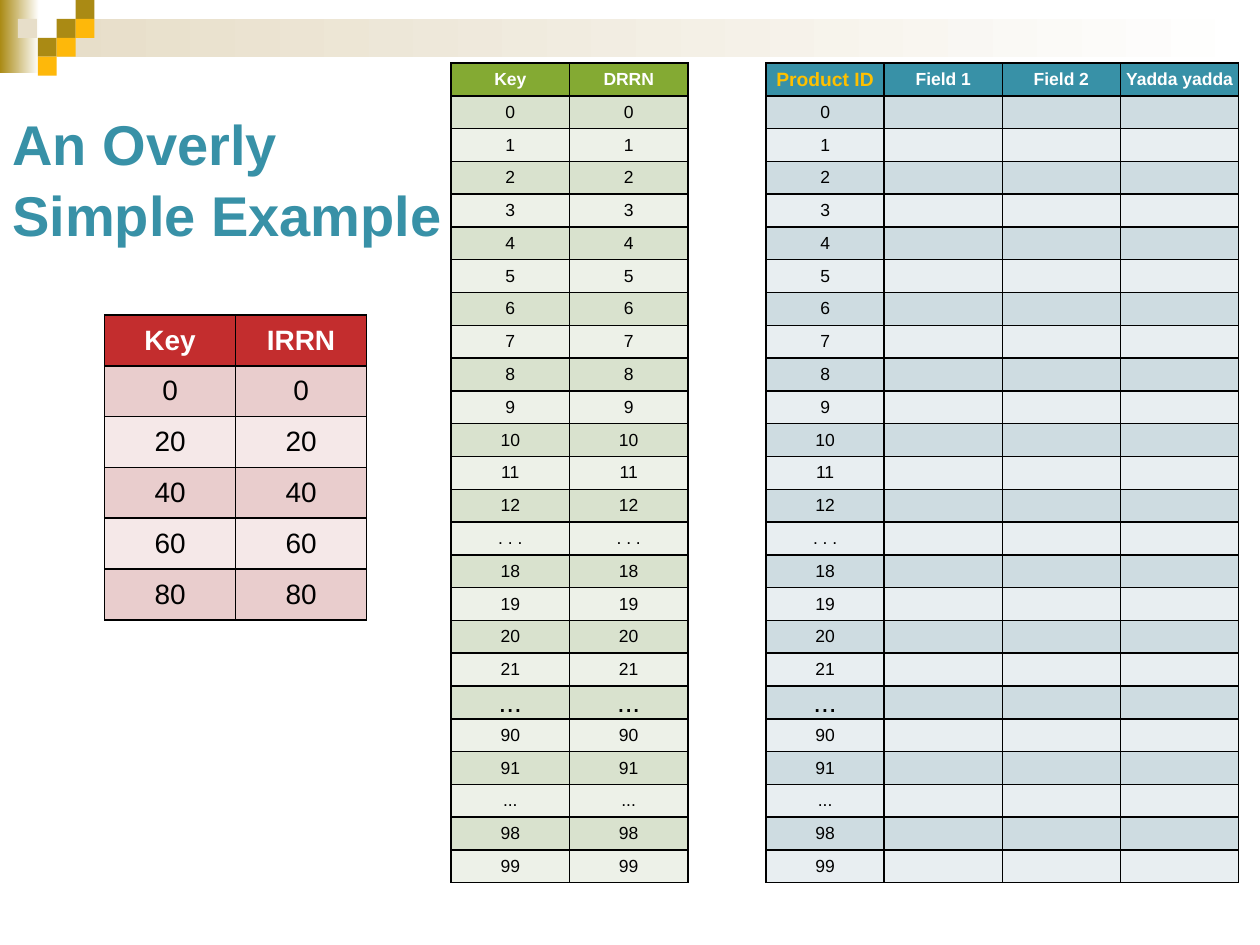
import pptx
import pptx.util
import pptx.dml.color
import pptx.enum.shapes
import pptx.enum.text
import pptx.oxml.ns
from lxml import etree

Inches = pptx.util.Inches
RGBColor = pptx.dml.color.RGBColor

BLACK = RGBColor(0x00, 0x00, 0x00)
WHITE = RGBColor(0xFF, 0xFF, 0xFF)
TEAL = RGBColor(0x38, 0x91, 0xA7)
GOLD = RGBColor(0xFF, 0xC0, 0x00)
OCHRE = RGBColor(0xAA, 0x8A, 0x14)
AMBER = RGBColor(0xFE, 0xB8, 0x0A)
SAND = RGBColor(0xE7, 0xDE, 0xC9)

# Header, odd row and even row fills of each table
TEAL_BANDS = (TEAL, RGBColor(0xCE, 0xDC, 0xE1), RGBColor(0xE8, 0xEE, 0xF1))
RED_BANDS = (RGBColor(0xC3, 0x2D, 0x2E), RGBColor(0xE9, 0xCD, 0xCD), RGBColor(0xF5, 0xE8, 0xE8))
GREEN_BANDS = (RGBColor(0x84, 0xAA, 0x33), RGBColor(0xD9, 0xE2, 0xCE), RGBColor(0xED, 0xF1, 0xE8))

TILE = 0.15
TILES = [  # column, row, colour
    (3, 1, OCHRE), (4, 0, OCHRE), (4, 1, AMBER), (2, 2, OCHRE),
    (0.95, 1, SAND), (3, 2, AMBER), (2, 3, AMBER),
]

RECORDS = [*map(str, range(13)), ". . .", "18", "19", "20", "21", "...",
           "90", "91", "...", "98", "99"]
BIG_DOTS_ROW = RECORDS.index("...") + 1


def write(para, text, *, size, color=BLACK, bold=False, font="Arial"):
    span = para.add_run()
    span.text = text
    span.font.name = font
    span.font.size = pptx.util.Pt(size)
    span.font.bold = bold
    span.font.color.rgb = color


def keep_empty_small(para, size):
    """Give an empty paragraph a text size, so that its row does not grow."""
    end = etree.SubElement(para._p, pptx.oxml.ns.qn("a:endParaRPr"))
    end.set("sz", str(size * 100))


def add_borders(cell, color=BLACK, width=1):
    properties = cell._tc.get_or_add_tcPr()
    for side in ("lnL", "lnR", "lnT", "lnB"):
        line = etree.SubElement(properties, pptx.oxml.ns.qn(f"a:{side}"))
        line.set("w", str(pptx.util.Pt(width)))
        fill = etree.SubElement(line, pptx.oxml.ns.qn("a:solidFill"))
        etree.SubElement(fill, pptx.oxml.ns.qn("a:srgbClr")).set("val", str(color))


class SlideBuilder:
    def __init__(self, deck):
        self.page = deck.slides.add_slide(deck.slide_layouts[6])

    def rectangle(self, left, top, width, height, color, fade_to=None):
        box = self.page.shapes.add_shape(
            pptx.enum.shapes.MSO_SHAPE.RECTANGLE,
            Inches(left), Inches(top), Inches(width), Inches(height))
        box.shadow.inherit = False
        box.line.fill.background()
        if fade_to is None:
            box.fill.solid()
            box.fill.fore_color.rgb = color
        else:
            box.fill.gradient()
            box.fill.gradient_angle = 0
            for stop, shade in zip(box.fill.gradient_stops, (color, fade_to)):
                stop.color.rgb = shade

    def title(self, lines, left, top, width, height):
        box = self.page.shapes.add_textbox(
            Inches(left), Inches(top), Inches(width), Inches(height))
        frame = box.text_frame
        frame.word_wrap = False
        frame.vertical_anchor = pptx.enum.text.MSO_ANCHOR.MIDDLE
        for index, line in enumerate(lines):
            para = frame.add_paragraph() if index else frame.paragraphs[0]
            para.space_before = pptx.util.Pt(2)
            write(para, line, size=32, color=TEAL, bold=True)

    def table(self, rows, left, top, width, height, bands, size, *,
              tight=False, formats=None):
        """Add a banded table; formats maps (row, column) to text keywords."""
        formats = formats or {}
        grid = self.page.shapes.add_table(
            len(rows), len(rows[0]),
            Inches(left), Inches(top), Inches(width), Inches(height)).table
        for row, texts in enumerate(rows):
            for column, text in enumerate(texts):
                cell = grid.cell(row, column)
                add_borders(cell)
                cell.fill.solid()
                cell.fill.fore_color.rgb = bands[0 if row == 0 else 2 - row % 2]
                cell.vertical_anchor = pptx.enum.text.MSO_ANCHOR.MIDDLE
                if tight:
                    cell.margin_left = cell.margin_right = 0
                    cell.margin_top = cell.margin_bottom = 0
                para = cell.text_frame.paragraphs[0]
                para.alignment = pptx.enum.text.PP_ALIGN.CENTER
                style = {"size": size, "bold": row == 0,
                         "color": BLACK if row else WHITE}
                style.update(formats.get((row, column), {}))
                if text:
                    write(para, text, **style)
                else:
                    keep_empty_small(para, size)


def main():
    deck = pptx.Presentation()
    deck.slide_width, deck.slide_height = Inches(10), Inches(7.5)
    slide = SlideBuilder(deck)

    slide.rectangle(0, 0, 0.31, 0.58, OCHRE, fade_to=WHITE)
    slide.rectangle(0.45, 0.15, 9.55, 0.3, SAND, fade_to=WHITE)
    for column, row, color in TILES:
        slide.rectangle(column * TILE, row * TILE, TILE, TILE, color)

    big_dots = {(BIG_DOTS_ROW, column): {"size": 16} for column in range(2)}
    products = [["Product ID", "Field 1", "Field 2", "Yadda yadda"]]
    products += [[record, "", "", ""] for record in RECORDS]
    slide.table(products, 6.08, 0.5, 3.75, 6.51, TEAL_BANDS, 10, tight=True,
                formats={**big_dots, (0, 0): {"size": 11, "color": GOLD}})

    index_rows = [["Key", "IRRN"]] + [[str(key)] * 2 for key in range(0, 100, 20)]
    slide.table(index_rows, 0.83, 2.5, 2.08, 2.42, RED_BANDS, 16)

    data_rows = [["Key", "DRRN"]] + [[record] * 2 for record in RECORDS]
    slide.table(data_rows, 3.58, 0.5, 1.88, 6.51, GREEN_BANDS, 10, tight=True,
                formats=big_dots)

    slide.title(["An Overly", "Simple Example"], 0, 0.83, 3.64, 1.18)
    deck.save("out.pptx")


if __name__ == "__main__":
    main()
